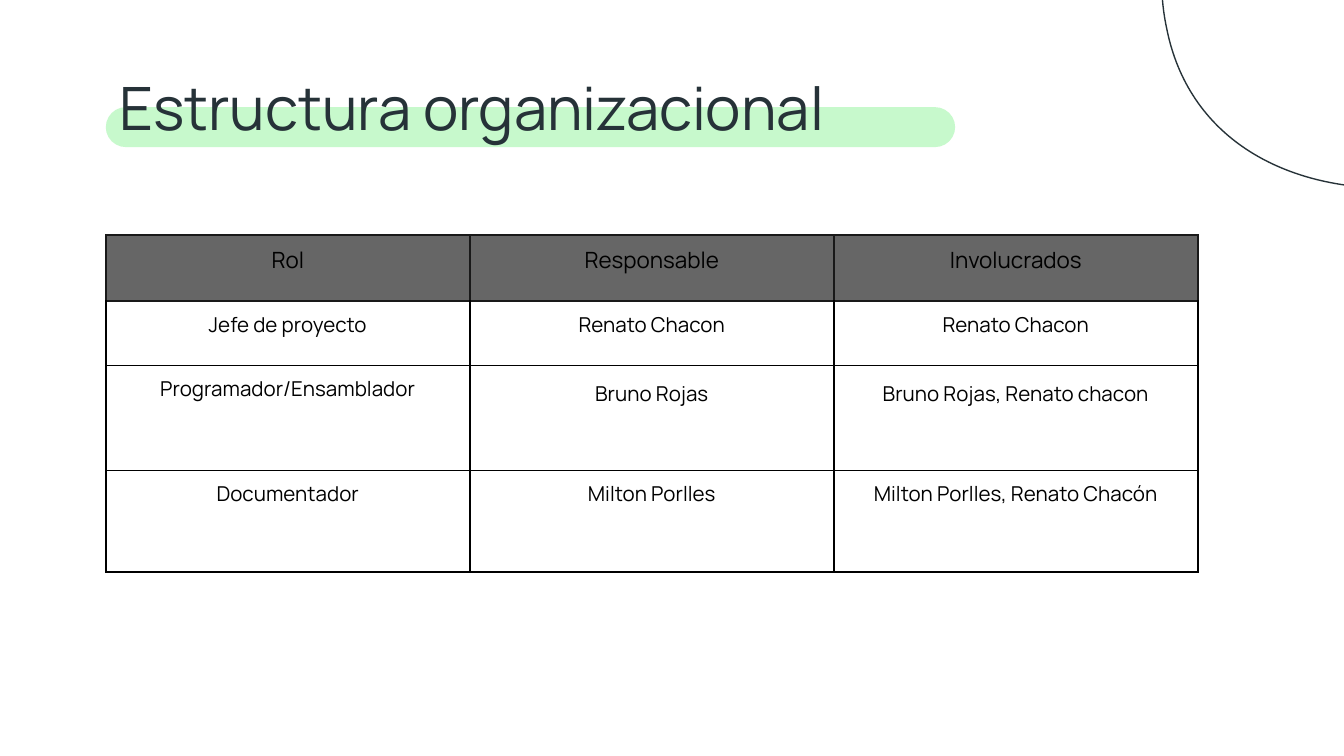
"""Build the organisational structure slide with its table of roles."""
from lxml.etree import SubElement
from pptx import Presentation
from pptx.dml.color import RGBColor
from pptx.enum.shapes import MSO_SHAPE as SHAPE
from pptx.enum.text import MSO_ANCHOR as ANCHOR, PP_ALIGN as ALIGN
from pptx.oxml.ns import qn
from pptx.util import Pt

BLACK = RGBColor(0x00, 0x00, 0x00)
EDGE = RGBColor(0x19, 0x19, 0x19)
INK = RGBColor(0x26, 0x32, 0x38)
GRAY = RGBColor(0x66, 0x66, 0x66)
MINT = RGBColor(0xC7, 0xF9, 0xCC)
LEFT = 56.7


def write(tf, text, size=11, color=BLACK, align=ALIGN.CENTER, spacing=None):
    p = tf.paragraphs[0]
    p.alignment = align
    p.line_spacing = spacing
    r = p.add_run()
    r.text = text
    r.font.name = "Manrope"
    r.font.size = Pt(size)
    r.font.color.rgb = color


def set_border(cell, side, color):
    ln = SubElement(cell._tc.get_or_add_tcPr(), qn(f"a:ln{side}"), w=str(Pt(1)))
    fill = SubElement(ln, qn("a:solidFill"))
    SubElement(fill, qn("a:srgbClr"), val=str(color))


prs = Presentation()
prs.slide_width, prs.slide_height = Pt(720), Pt(405)
s = prs.slides.add_slide(prs.slide_layouts[6])

bar = s.shapes.add_shape(SHAPE.ROUNDED_RECTANGLE, Pt(LEFT), Pt(57.4), Pt(455), Pt(21.4))
bar.adjustments[0] = 0.5
bar.fill.solid()
bar.fill.fore_color.rgb = MINT
bar.line.fill.background()
bar.shadow.inherit = False

start = (871.9, -133.2)
curves = [
    ((866.2, -133.2), (859, -131), (851.8, -127.4)),
    ((823.7, -113), (821.5, -81.4), (783.4, -79.9)),
    ((779.8, -79.2), (776.2, -79.2), (772.6, -79.2)),
    ((754.6, -79.2), (737.3, -81.4), (721.4, -81.4)),
    ((702, -81.4), (682.6, -78.5), (661, -67)),
    ((625, -47.5), (617.8, -18.7), (625, 15.1)),
    ((636.5, 73.4), (686.9, 100.8), (744.5, 100.8)),
    ((769.7, 100.8), (795.6, 95.8), (820.1, 86.4)),
    ((899.3, 56.2), (936, -14.4), (918, -84.2)),
    ((913, -105.1), (897.8, -133.2), start),
]
builder = s.shapes.build_freeform(Pt(start[0]), Pt(start[1]))
builder.add_line_segments([(Pt(x), Pt(y)) for curve in curves for x, y in curve], close=True)
blob = builder.convert_to_shape()
lines = list(blob._element.iter(qn("a:lnTo")))
for first, second, third in zip(lines[::3], lines[1::3], lines[2::3]):
    first.tag = qn("a:cubicBezTo")
    for line in (second, third):
        first.append(line[0])
        line.getparent().remove(line)
blob.fill.background()
blob.line.color.rgb = INK
blob.line.width = Pt(0.75)
blob.shadow.inherit = False

title = s.shapes.add_textbox(Pt(LEFT), Pt(30.2), Pt(607), Pt(48.2))
tf = title.text_frame
tf.word_wrap = True
tf.vertical_anchor = ANCHOR.MIDDLE
tf.margin_left = tf.margin_right = tf.margin_top = Pt(7.2)
tf.margin_bottom = Pt(1.6)
write(tf, "Estructura organizacional", size=32, color=INK, align=ALIGN.LEFT)

rows = [
    ("Rol", "Responsable", "Involucrados"),
    ("Jefe de proyecto", "Renato Chacon", "Renato Chacon"),
    ("Programador/Ensamblador", "Bruno Rojas", "Bruno Rojas, Renato chacon"),
    ("Documentador", "Milton Porlles", "Milton Porlles, Renato Chacón"),
]
heights = [35.3, 34.6, 56.2, 54.3]
table = s.shapes.add_table(4, 3, Pt(LEFT), Pt(126), Pt(585), Pt(sum(heights))).table
table.first_row = table.horz_banding = False
for col in table.columns:
    col.width = Pt(195)
for i, (row, height) in enumerate(zip(rows, heights)):
    table.rows[i].height = Pt(height)
    for j, text in enumerate(row):
        cell = table.cell(i, j)
        cell.margin_left = cell.margin_right = Pt(5)
        cell.margin_top = cell.margin_bottom = Pt(5)
        for side in "LRTB":
            set_border(cell, side, EDGE if i == 0 or (i == 1 and side == "T") else BLACK)
        if i == 0:
            cell.fill.solid()
            cell.fill.fore_color.rgb = GRAY
        else:
            cell.fill.background()
        write(cell.text_frame, text, size=12 if i == 0 else 11,
              spacing=1.15 if i == 2 and j > 0 else None)

prs.save("out.pptx")
